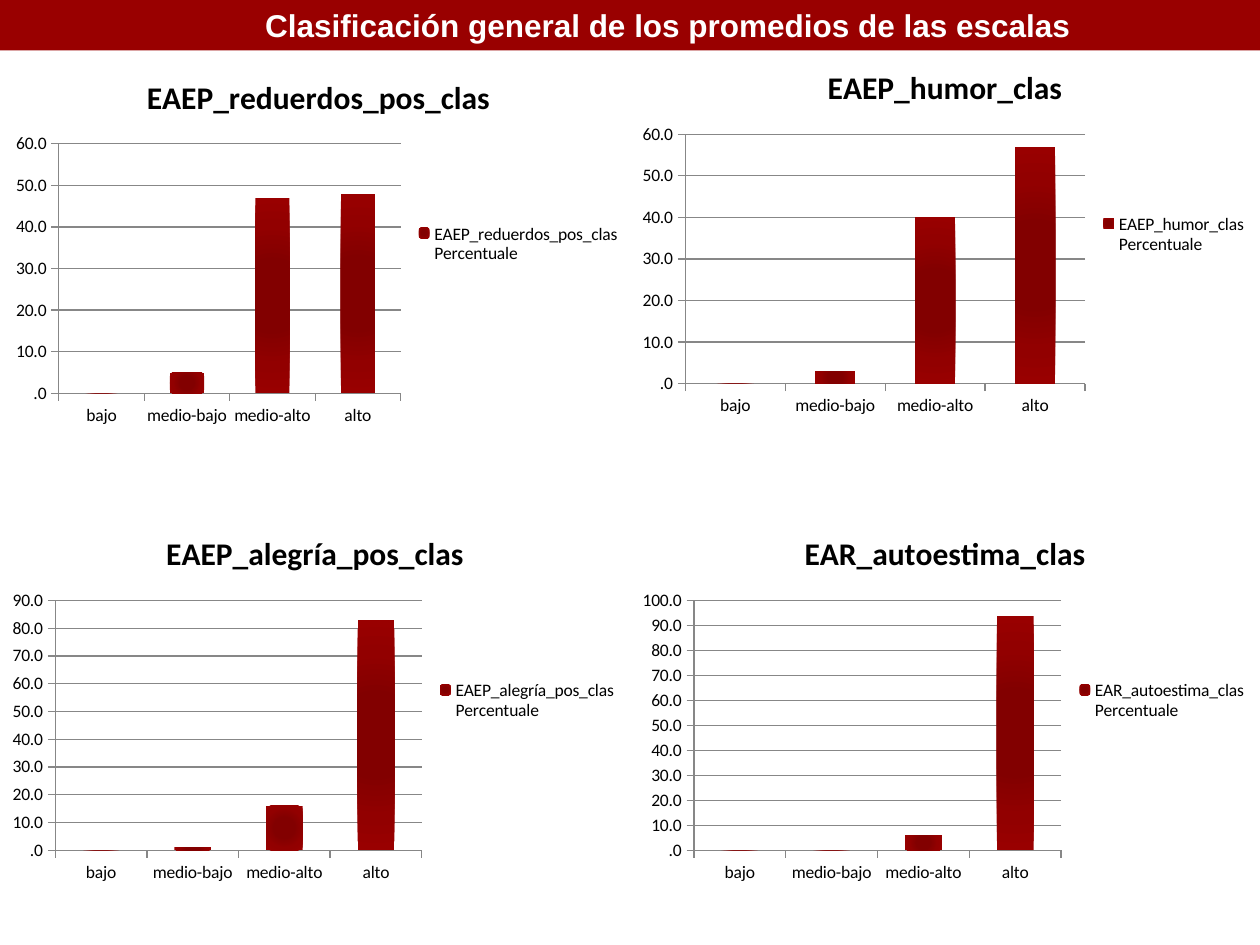
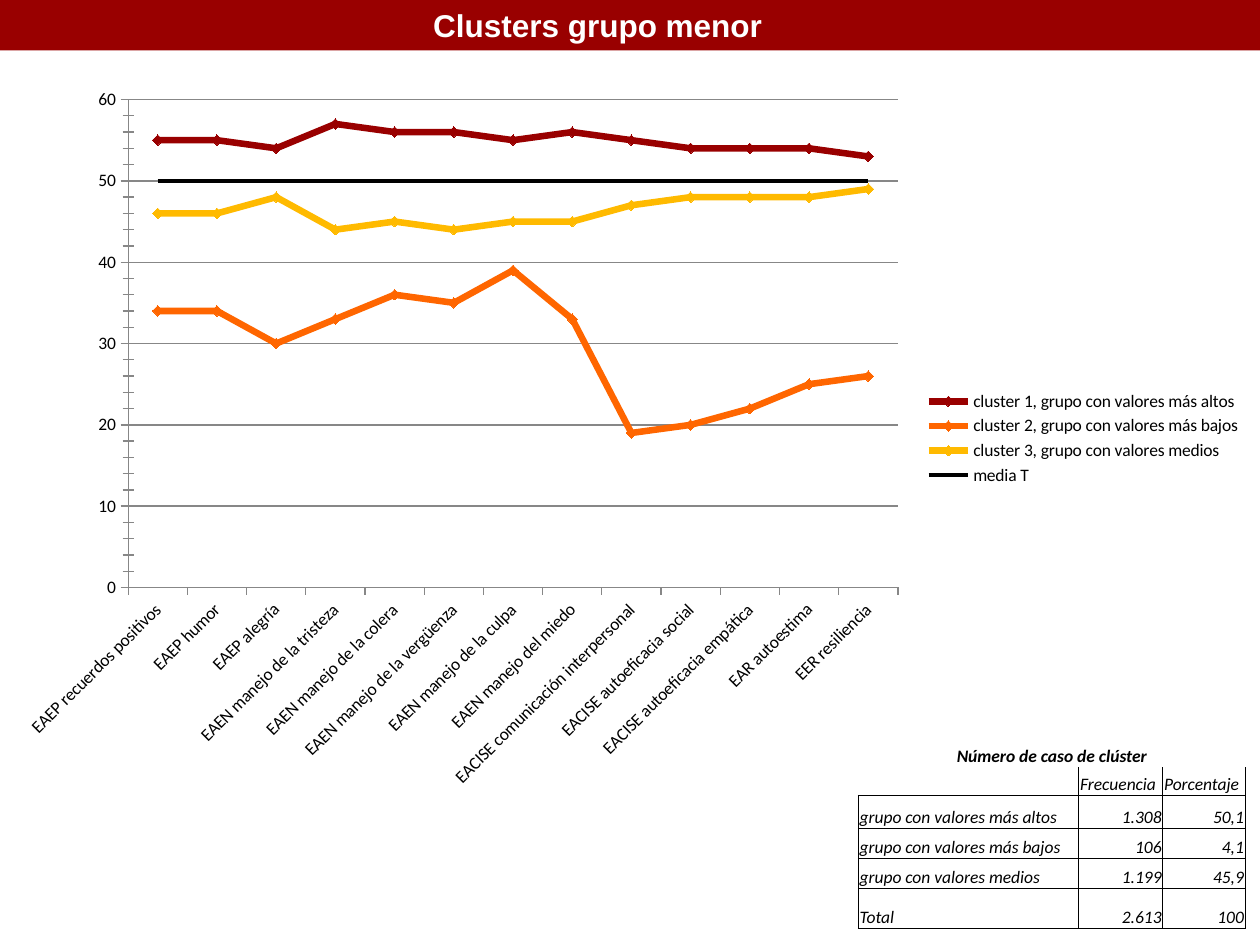
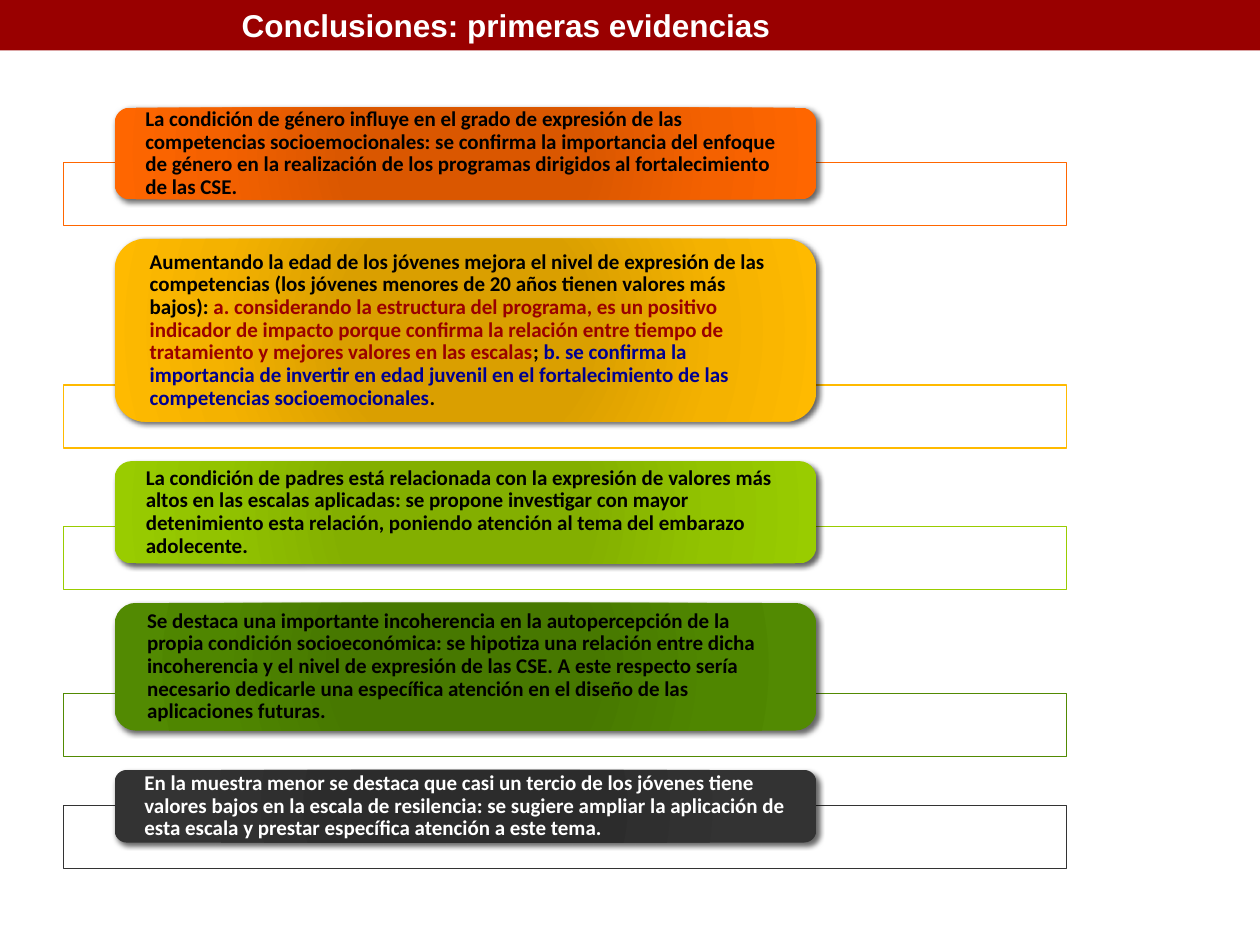
from pptx import Presentation
from pptx.chart.data import CategoryChartData
from pptx.dml.color import RGBColor
from pptx.enum.chart import XL_CHART_TYPE, XL_LEGEND_POSITION, XL_MARKER_STYLE, XL_TICK_MARK
from pptx.enum.shapes import MSO_SHAPE
from pptx.enum.text import MSO_ANCHOR, MSO_AUTO_SIZE, PP_ALIGN
from pptx.oxml import parse_xml
from pptx.oxml.ns import nsdecls, qn
from pptx.util import Pt

COLUMN, LINE = XL_CHART_TYPE.COLUMN_CLUSTERED, XL_CHART_TYPE.LINE_MARKERS
RIGHT = XL_LEGEND_POSITION.RIGHT
DIAMOND, BARE = XL_MARKER_STYLE.DIAMOND, XL_MARKER_STYLE.NONE
OUT, CROSS = XL_TICK_MARK.OUTSIDE, XL_TICK_MARK.CROSS
RECT, ROUND = MSO_SHAPE.RECTANGLE, MSO_SHAPE.ROUNDED_RECTANGLE
MIDDLE, BOTTOM = MSO_ANCHOR.MIDDLE, MSO_ANCHOR.BOTTOM
GROW = MSO_AUTO_SIZE.SHAPE_TO_FIT_TEXT
FLUSH, CENTER, END = PP_ALIGN.LEFT, PP_ALIGN.CENTER, PP_ALIGN.RIGHT

COLORS = {
    "red": "990000", "orange": "FF6600", "gold": "FFBA00", "lime": "99CC00",
    "green": "528A02", "dark": "333333", "navy": "000090", "grid": "878787",
    "black": "000000", "white": "FFFFFF",
}
# Inner and middle shades of each glowing fill
SHADES = {
    "red": ("820000", "920000"), "orange": ("DA5700", "F46100"),
    "gold": ("DA9F00", "F4B200"), "lime": ("83AF00", "92C300"),
    "green": ("477800", "4F8600"), "dark": ("2C2C2C", "313131"),
}

LEVELS = ["bajo", "medio-bajo", "medio-alto", "alto"]
SCALES = [
    ("EAEP_reduerdos_pos_clas", 2, 31.5, 60, (0, 5, 47, 48)),
    ("EAEP_humor_clas", 360, 26, 60, (0, 3, 40, 57)),
    ("EAEP_alegría_pos_clas", 0, 292.5, 90, (0, 1, 16, 83)),
    ("EAR_autoestima_clas", 360, 292.5, 100, (0, 0, 6, 94)),
]

TRAITS = [
    "EAEP recuerdos positivos", "EAEP humor", "EAEP alegría",
    "EAEN manejo de la tristeza", "EAEN manejo de la colera",
    "EAEN manejo de la vergüenza", "EAEN manejo de la culpa",
    "EAEN manejo del miedo", "EACISE comunicación interpersonal",
    "EACISE autoeficacia social", "EACISE autoeficacia empática",
    "EAR autoestima", "EER resiliencia",
]
GROUPS = [
    ("cluster 1, grupo con valores más altos", "red",
     (55, 55, 54, 57, 56, 56, 55, 56, 55, 54, 54, 54, 53)),
    ("cluster 2, grupo con valores más bajos", "orange",
     (34, 34, 30, 33, 36, 35, 39, 33, 19, 20, 22, 25, 26)),
    ("cluster 3, grupo con valores medios", "gold",
     (46, 46, 48, 44, 45, 44, 45, 45, 47, 48, 48, 48, 49)),
    ("media T", "black", (50,) * len(TRAITS)),
]
CASES = [
    ("Número de caso de clúster", "", ""),
    ("", "Frecuencia", "Porcentaje"),
    ("grupo con valores más altos", "1.308", "50,1"),
    ("grupo con valores más bajos", "106", "4,1"),
    ("grupo con valores medios", "1.199", "45,9"),
    ("Total", "2.613", "100"),
]

# Card colour, card height, runs of text with their colours
POINTS = [
    ("orange", 52.5, [(
        "La condición de género influye en el grado de expresión de las competencias "
        "socioemocionales: se confirma la importancia del enfoque de género en la "
        "realización de los programas dirigidos al fortalecimiento de las CSE.", "black")]),
    ("gold", 104.5, [
        ("Aumentando la edad de los jóvenes mejora el nivel de expresión de las "
         "competencias (los jóvenes menores de 20 años tienen valores más bajos): ", "black"),
        ("a. considerando la estructura del programa, es un positivo indicador de impacto "
         "porque confirma la relación entre tiempo de tratamiento y mejores valores en "
         "las escalas", "red"),
        ("; ", "black"),
        ("b. se confirma la importancia de invertir en edad juvenil en el fortalecimiento "
         "de las competencias socioemocionales", "navy"),
        (".", "black")]),
    ("lime", 58.5, [(
        "La condición de padres está relacionada con la expresión de valores más altos en "
        "las escalas aplicadas: se propone investigar con mayor detenimiento esta "
        "relación, poniendo atención al tema del embarazo adolecente.", "black")]),
    ("green", 73, [(
        "Se destaca una importante incoherencia en la autopercepción de la propia "
        "condición socioeconómica: se hipotiza una relación entre dicha incoherencia y el "
        "nivel de expresión de las CSE. A este respecto sería necesario dedicarle una "
        "específica atención en el diseño de las aplicaciones futuras.", "black")]),
    ("dark", 41.5, [(
        "En la muestra menor se destaca que casi un tercio de los jóvenes tiene valores "
        "bajos en la escala de resilencia: se sugiere ampliar la aplicación de esta "
        "escala y prestar específica atención a este tema.", "white")]),
]


def rgb(name):
    return RGBColor.from_string(COLORS[name])


def style(font, size, color=None, bold=False, italic=False, face="Calibri"):
    font.name, font.size, font.bold, font.italic = face, Pt(size), bold, italic
    if color:
        font.color.rgb = rgb(color)


def glow(props, fill, color):
    """Give the shape properties a round gradient of the colour's shades."""
    fill.solid()
    inner, mid = SHADES[color]
    stops = [(0, inner), (34, inner), (70, mid), (100, COLORS[color])]
    marks = "".join(f'<a:gs pos="{pos}000"><a:srgbClr val="{code}"/></a:gs>'
                    for pos, code in stops)
    grad = parse_xml(
        f'<a:gradFill {nsdecls("a")} rotWithShape="1"><a:gsLst>{marks}</a:gsLst>'
        '<a:path path="circle"><a:fillToRect l="100000" t="100000" r="100000" b="100000"/>'
        '</a:path></a:gradFill>')
    props.replace(props.find(qn("a:solidFill")), grad)


def add_box(slide, kind, x, y, w, h):
    box = slide.shapes.add_shape(kind, Pt(x), Pt(y), Pt(w), Pt(h))
    box.shadow.inherit = False
    box.line.fill.background()
    return box


def add_page(deck, title, x, w):
    """Add a slide with the red band and its title."""
    slide = deck.slides.add_slide(deck.slide_layouts[6])
    band = add_box(slide, RECT, 0, 0, 720, 28.8)
    band.fill.solid()
    band.fill.fore_color.rgb = rgb("red")
    frame = slide.shapes.add_textbox(Pt(x), 0, Pt(w), Pt(29)).text_frame
    frame.word_wrap, frame.auto_size = False, GROW
    para = frame.paragraphs[0]
    para.text = title
    style(para.font, 18, "white", bold=True, face="Arial")
    return slide


def add_graph(slide, kind, area, cats, rows, top, step):
    """Add a chart with a right legend, grey grid and fixed value scale."""
    data = CategoryChartData()
    data.categories = cats
    for name, vals in rows:
        data.add_series(name, vals)
    chart = slide.shapes.add_chart(kind, *map(Pt, area), data).chart
    style(chart.font, 10, "black")
    chart.has_title = False
    chart.has_legend = True
    chart.legend.position = RIGHT
    chart.legend.include_in_layout = False
    chart.plots[0].vary_by_categories = False
    scale = chart.value_axis
    scale.minimum_scale, scale.maximum_scale, scale.major_unit = 0, top, step
    scale.has_major_gridlines = True
    for part in (scale, scale.major_gridlines, chart.category_axis):
        part.format.line.color.rgb = rgb("grid")
        part.format.line.width = Pt(0.75)
    scale.major_tick_mark = chart.category_axis.major_tick_mark = OUT
    return chart


def add_bars(slide, name, x, y, top, vals):
    chart = add_graph(slide, COLUMN, (x, y, 360, 216), LEVELS,
                      [(f"{name} Percentuale", vals)], top, 10)
    chart.has_title = True
    para = chart.chart_title.text_frame.paragraphs[0]
    para.text = name
    style(para.font, 18, "black", bold=True)
    labels = chart.value_axis.tick_labels
    labels.number_format, labels.number_format_is_linked = "####.0", False
    plot = chart.plots[0]
    plot.gap_width = 150
    bars = plot.series[0]
    glow(bars._element.get_or_add_spPr(), bars.format.fill, "red")


def add_lines(slide):
    chart = add_graph(slide, LINE, (1.5, 43, 715, 415), TRAITS,
                      [(name, vals) for name, _, vals in GROUPS], 60, 10)
    scale = chart.value_axis
    scale.minor_unit = 2
    scale.major_tick_mark = scale.minor_tick_mark = CROSS
    names = chart.category_axis
    style(names.tick_labels.font, 10, "black")
    names._element.txPr.find(qn("a:bodyPr")).set("rot", "-2700000")
    for line, (_, color, _) in zip(chart.plots[0].series, GROUPS):
        mean = color == "black"
        line.smooth = False
        line.format.line.color.rgb = rgb(color)
        line.format.line.width = Pt(2.25 if mean else 3.75)
        mark = line.marker
        mark.style = BARE if mean else DIAMOND
        if not mean:
            mark.size = 6
            mark.format.fill.solid()
            mark.format.fill.fore_color.rgb = rgb(color)
            mark.format.line.color.rgb = rgb(color)


def set_edges(cell, drawn):
    """Draw the named sides of a cell and clear the others."""
    props = cell._tc.get_or_add_tcPr()
    for spot, side in enumerate("LRTB"):
        paint = (f'<a:solidFill><a:srgbClr val="{COLORS["black"]}"/></a:solidFill>'
                 if side in drawn else "<a:noFill/>")
        props.insert(spot, parse_xml(
            f'<a:ln{side} {nsdecls("a")} w="6350">{paint}</a:ln{side}>'))


def add_cases(slide):
    table = slide.shapes.add_table(len(CASES), 3, Pt(490.5), Pt(414), Pt(221), Pt(116.5)).table
    table.first_row = table.horz_banding = False
    for col, width in zip(table.columns, (126, 48, 47)):
        col.width = Pt(width)
    for row, height in zip(table.rows, (24.5, 16, 19, 17, 17, 23)):
        row.height = Pt(height)
    table.cell(0, 0).merge(table.cell(0, 2))
    for r, texts in enumerate(CASES):
        for c, text in enumerate(texts):
            cell = table.cell(r, c)
            cell.margin_left = cell.margin_right = cell.margin_top = Pt(0.75)
            cell.margin_bottom = 0
            cell.vertical_anchor = BOTTOM
            cell.fill.background()
            para = cell.text_frame.paragraphs[0]
            if text:
                para.text = text
            para.alignment = CENTER if r == 0 else END if r > 1 and c else FLUSH
            style(para.font, 10, "black", bold=r == 0, italic=True)
            para._p.get_or_add_endParaRPr().set("sz", "1000")
            if r == 0:
                set_edges(cell, "")
            elif r == 1:
                set_edges(cell, "LRB" if c else "RB")
            else:
                set_edges(cell, "LRTB")


def add_point(slide, y, color, tall, runs):
    """Add a card over its outlined bar and return the bar's lower edge."""
    base = y + tall - 21
    bar = add_box(slide, RECT, 36.5, base, 573, 36)
    bar.fill.solid()
    bar.fill.fore_color.rgb = rgb("white")
    tint = bar._element.spPr.find(qn("a:solidFill"))[0]
    tint.append(parse_xml(f'<a:alpha {nsdecls("a")} val="90000"/>'))
    bar.line.color.rgb = rgb(color)
    bar.line.width = Pt(0.75)

    card = add_box(slide, ROUND, 65.5, y, 401, tall)
    props = card._element.spPr
    glow(props, card.fill, color)
    props.find(qn("a:effectLst")).append(parse_xml(
        f'<a:outerShdw {nsdecls("a")} blurRad="38100" dist="25400" dir="2700000" '
        'rotWithShape="0"><a:srgbClr val="000000"><a:alpha val="60000"/></a:srgbClr>'
        '</a:outerShdw>'))
    frame = card.text_frame
    frame.word_wrap, frame.vertical_anchor = True, MIDDLE
    frame.margin_left = frame.margin_right = Pt(15)
    frame.margin_top = frame.margin_bottom = 0
    para = frame.paragraphs[0]
    para.alignment, para.line_spacing = FLUSH, 0.9
    style(para.font, 12, bold=True)
    for text, ink in runs:
        run = para.add_run()
        run.text = text
        run.font.color.rgb = rgb(ink)
    return base + 36


def main():
    deck = Presentation()
    deck.slide_width, deck.slide_height = Pt(720), Pt(540)

    slide = add_page(deck, "Clasificación general de los promedios de las escalas", 144.5, 479.5)
    for scale in SCALES:
        add_bars(slide, *scale)

    slide = add_page(deck, "Clusters grupo menor", 240.5, 204.5)
    add_lines(slide)
    add_cases(slide)

    slide = add_page(deck, "Conclusiones: primeras evidencias", 131, 319.5)
    y = 61.5
    for point in POINTS:
        y = add_point(slide, y, *point) + 7.5

    deck.save("out.pptx")


if __name__ == "__main__":
    main()
